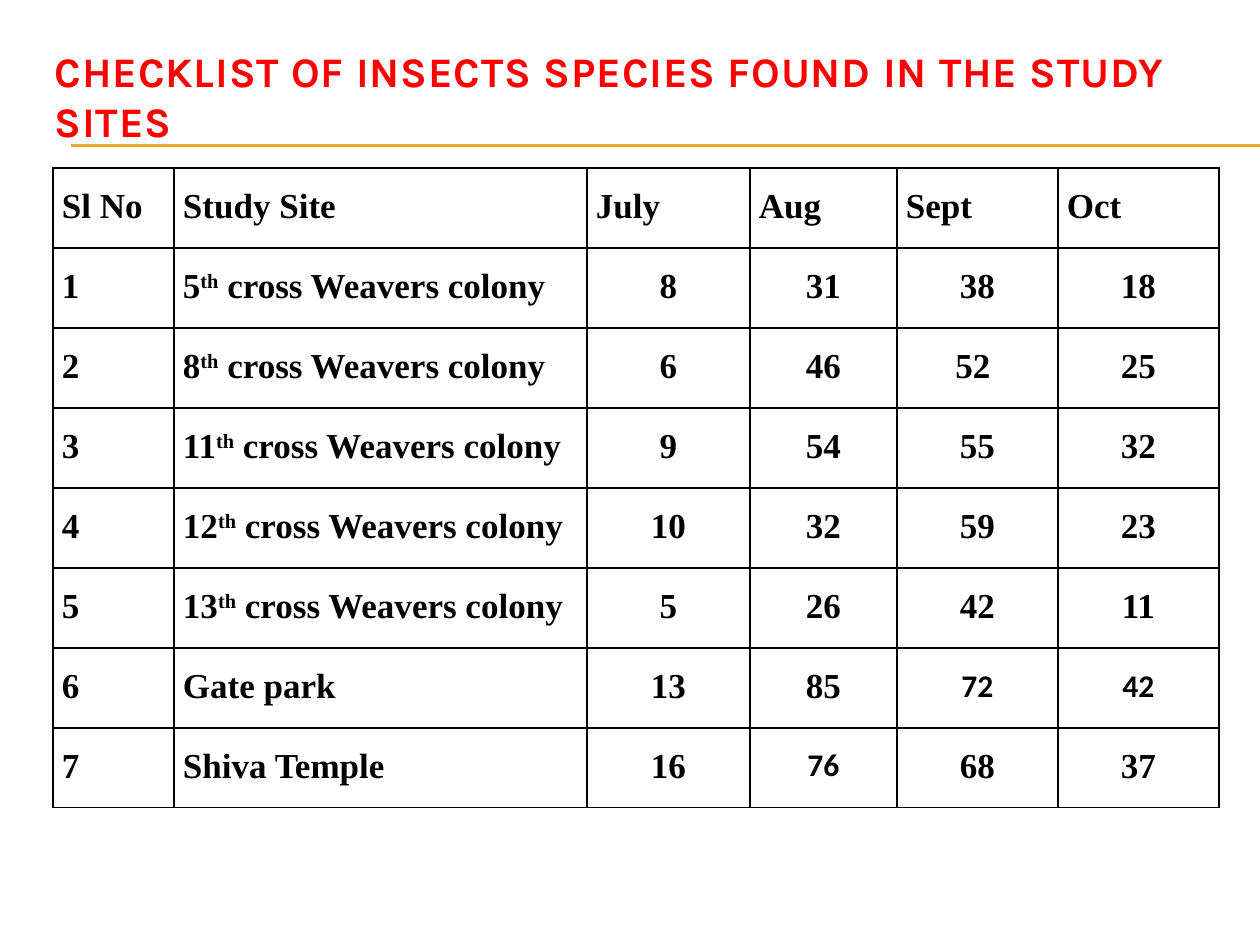
import copy
import pptx
import pptx.util
import pptx.dml.color
import pptx.enum.text
import pptx.oxml.xmlchemy
from pptx.oxml.ns import qn
from lxml import etree

PX = 914400 // 126
RED = pptx.dml.color.RGBColor(0xFF, 0x00, 0x00)
BLACK = pptx.dml.color.RGBColor(0x00, 0x00, 0x00)
GOLD = pptx.dml.color.RGBColor(0xF0, 0xA2, 0x2E)
SERIF = ("Times New Roman", 20)
SANS = ("Calibri", 18)

COLUMNS = [121, 413, 163, 147, 161, 161]
ROW_HEIGHT = 80
HEADER = ["Sl No", "Study Site", "July", "Aug", "Sept", "Oct"]
COLONY = " cross Weavers colony"
SITES = [
    (["5", "th", COLONY], ["8", "31", "38", "18"]),
    (["8", "th", COLONY], ["6", "46", "52 ", "25"]),
    (["11", "th", COLONY], ["9", "54", "55", "32"]),
    (["12", "th", COLONY], ["10", "32", "59", "23"]),
    (["13", "th", COLONY], ["5", "26", "42", "11"]),
    (["Gate park"], ["13", "85", "72", "42"]),
    (["Shiva Temple"], ["16", "76", "68", "37"]),
]
SANS_CELLS = {(6, 4), (6, 5), (7, 3)}


def add_run(p, text, font, color):
    r = p.add_run()
    r.text = text
    r.font.name, size = font
    r.font.size = pptx.util.Pt(size)
    r.font.bold = True
    r.font.color.rgb = color
    return r


def add_rules(s, x, y, w):
    for top in (y, y + 1):
        line = s.shapes.add_connector(1, x * PX, top * PX, (x + w) * PX, top * PX)
        line.line.color.rgb = GOLD
        line.line.width = pptx.util.Pt(0.75)
        etree.SubElement(line._element.spPr, qn("a:effectLst"))


def add_title(s, x, y, w, h):
    sp = s.shapes.title
    sp.left, sp.top, sp.width, sp.height = (v * PX for v in (x, y, w, h))
    tf = sp.text_frame
    tf.word_wrap = True
    tf.auto_size = pptx.enum.text.MSO_AUTO_SIZE.NONE
    tf.vertical_anchor = pptx.enum.text.MSO_ANCHOR.MIDDLE
    p = tf.paragraphs[0]
    p.alignment = pptx.enum.text.PP_ALIGN.LEFT
    r = add_run(p, "CHECKLIST OF INSECTS SPECIES FOUND IN THE STUDY SITES", ("Karla", 24), RED)
    r_pr = r._r.get_or_add_rPr()
    r_pr.set("spc", "50")
    p.add_line_break()
    p._p[-1].append(copy.deepcopy(r_pr))
    end = copy.deepcopy(r_pr)
    end.tag = qn("a:endParaRPr")
    p._p.append(end)


def set_borders(cell):
    tc_pr = cell._tc.get_or_add_tcPr()
    for i, side in enumerate(("lnL", "lnR", "lnT", "lnB")):
        ln = etree.Element(qn("a:" + side), w=str(pptx.util.Pt(1)))
        fill = etree.SubElement(ln, qn("a:solidFill"))
        etree.SubElement(fill, qn("a:srgbClr"), val=str(BLACK))
        tc_pr.insert(i, ln)


def fill_cell(cell, parts, font, centred):
    cell.margin_left = cell.margin_right = 9 * PX
    cell.margin_top = cell.margin_bottom = 0
    cell.fill.background()
    set_borders(cell)
    p = cell.text_frame.paragraphs[0]
    p.line_spacing = 1.5
    if centred:
        p.alignment = pptx.enum.text.PP_ALIGN.CENTER
    for part in parts:
        r = add_run(p, part, font, BLACK)
        if part == "th":
            r._r.get_or_add_rPr().set("baseline", "30000")


def add_site_table(s, x, y):
    rows = [[[h] for h in HEADER]]
    for number, (site, counts) in enumerate(SITES, 1):
        rows.append([[str(number)], site] + [[c] for c in counts])
    table = s.shapes.add_table(len(rows), len(COLUMNS), x * PX, y * PX,
                               sum(COLUMNS) * PX, len(rows) * ROW_HEIGHT * PX).table
    table.first_row = table.horz_banding = False
    for column, width in zip(table.columns, COLUMNS):
        column.width = width * PX
    for i, row in enumerate(rows):
        table.rows[i].height = ROW_HEIGHT * PX
        for j, parts in enumerate(row):
            font = SANS if (i, j) in SANS_CELLS else SERIF
            fill_cell(table.cell(i, j), parts, font, i > 0 and j > 1)


def main():
    prs = pptx.Presentation()
    prs.slide_width, prs.slide_height = 1260 * PX, 945 * PX
    s = prs.slides.add_slide(prs.slide_layouts[5])
    add_rules(s, 71, 145, 1189)
    add_title(s, 42, 63, 1197, 116)
    add_site_table(s, 53, 168)
    prs.save("out.pptx")


if __name__ == "__main__":
    main()
